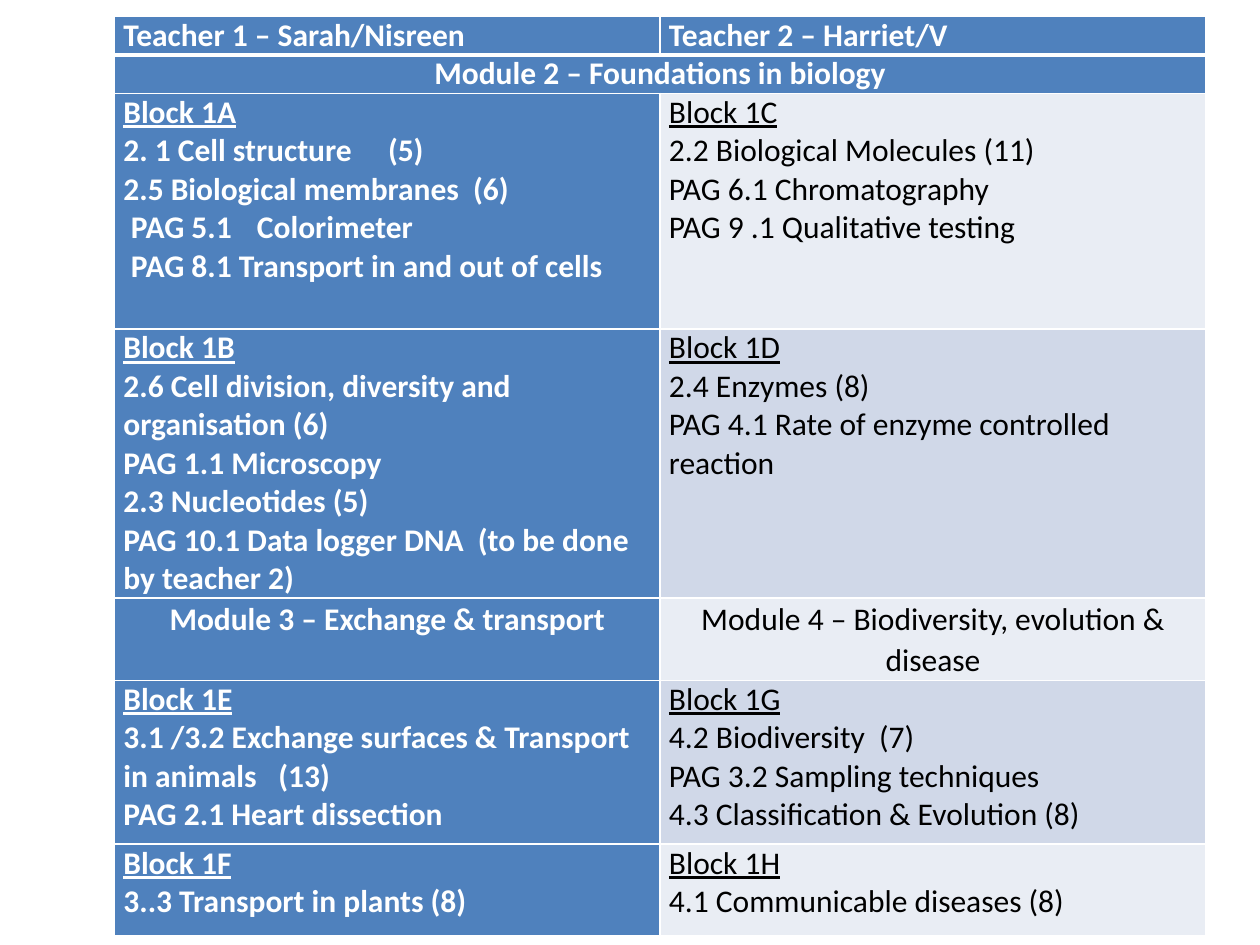
from lxml import etree
from pptx import Presentation
from pptx.dml.color import RGBColor
from pptx.enum.text import PP_ALIGN
from pptx.oxml import ns
from pptx.util import Inches, Pt

BLUE = RGBColor(0x4F, 0x81, 0xBD)
PALE = RGBColor(0xE9, 0xED, 0xF4)
MID = RGBColor(0xD0, 0xD8, 0xE8)
WHITE = RGBColor(0xFF, 0xFF, 0xFF)
BLACK = RGBColor(0, 0, 0)

COLUMN_WIDTH = 4.33
ROW_HEIGHTS = [0.28, 0.28, 1.87, 1.8, 0.29, 1.3, 0.73]
HEADER_ROWS = (0, 1)
MODULE_ROWS = (1, 4)

# One (teacher 1, teacher 2) pair per row, one string per paragraph
PLAN = [
    (["Teacher 1 – Sarah/Nisreen"], ["Teacher 2 – Harriet/V"]),
    (["Module 2 – Foundations in biology"], []),
    (["Block 1A", "2. 1 Cell structure\t(5)", "2.5 Biological membranes  (6)",
      "PAG 5.1\tColorimeter", "PAG 8.1 Transport in and out of cells"],
     ["Block 1C", "2.2 Biological Molecules (11)", "PAG 6.1 Chromatography",
      "PAG 9 .1 Qualitative testing"]),
    (["Block 1B", "2.6 Cell division, diversity and organisation (6)",
      "PAG 1.1 Microscopy", "2.3 Nucleotides (5)",
      "PAG 10.1 Data logger DNA  (to be done by teacher 2)"],
     ["Block 1D", "2.4 Enzymes (8)",
      "PAG 4.1 Rate of enzyme controlled reaction"]),
    (["Module 3 – Exchange & transport"],
     ["Module 4 – Biodiversity, evolution & disease"]),
    (["Block 1E", "3.1 /3.2 Exchange surfaces & Transport in animals\t(13)",
      "PAG 2.1 Heart dissection"],
     ["Block 1G", "4.2 Biodiversity  (7)", "PAG 3.2 Sampling techniques",
      "4.3 Classification & Evolution (8)"]),
    (["Block 1F", "3..3 Transport in plants (8)"],
     ["Block 1H", "4.1 Communicable diseases (8)"]),
]

# Tab stops for lines with a wide gap, and lines set slightly in (inches)
TAB_STOPS = {"2. 1": 2.1, "PAG 5.1": 1.05, "3.1 /3.2": 1.23}
INDENTS = {"PAG 5.1": 0.06, "PAG 8.1": 0.06}


def match_start(line, settings):
    return next((v for start, v in settings.items() if line.startswith(start)), None)


def add_tab_stop(properties, position):
    tabs = etree.SubElement(properties, ns.qn("a:tabLst"))
    etree.SubElement(tabs, ns.qn("a:tab"), pos=str(Inches(position)), algn="l")


def set_borders(cell, row):
    properties = cell._tc.get_or_add_tcPr()
    for side in "LRTB":
        under_header = (row, side) in ((0, "B"), (1, "T"))
        border = etree.SubElement(properties, ns.qn(f"a:ln{side}"),
                                  w=str(Pt(3 if under_header else 1)))
        fill = etree.SubElement(border, ns.qn("a:solidFill"))
        etree.SubElement(fill, ns.qn("a:srgbClr"), val=str(WHITE))


def write_line(paragraph, line, strong, row):
    paragraph.text = line
    font = paragraph.font
    font.name, font.size, font.bold = "Calibri", Pt(18), strong
    font.color.rgb = WHITE if strong else BLACK
    font.underline = line.startswith("Block")
    if row in MODULE_ROWS:
        paragraph.alignment = PP_ALIGN.CENTER
        if row not in HEADER_ROWS:
            paragraph.line_spacing = 1.07

    properties = paragraph._p.get_or_add_pPr()
    indent = match_start(line, INDENTS)
    if indent:
        properties.set("marL", str(Inches(indent)))
        properties.set("indent", "0")
    tab = match_start(line, TAB_STOPS)
    if tab:
        add_tab_stop(properties, tab)
        # Tab stops come before the default run properties
        properties.append(properties.find(ns.qn("a:defRPr")))


def fill_cell(cell, lines, row, column):
    strong = row in HEADER_ROWS or column == 0
    cell.margin_left = cell.margin_right = Inches(0.07)
    cell.margin_top = cell.margin_bottom = 0
    set_borders(cell, row)
    cell.fill.solid()
    cell.fill.fore_color.rgb = BLUE if strong else (MID if row % 2 else PALE)
    frame = cell.text_frame
    for i, line in enumerate(lines):
        paragraph = frame.add_paragraph() if i else frame.paragraphs[0]
        write_line(paragraph, line, strong, row)


def add_plan(slide):
    table = slide.shapes.add_table(
        len(PLAN), 2, Inches(0.91), Inches(0.13),
        Inches(2 * COLUMN_WIDTH), Inches(sum(ROW_HEIGHTS))).table
    table.first_col = True
    for column in table.columns:
        column.width = Inches(COLUMN_WIDTH)
    for row, height in enumerate(ROW_HEIGHTS):
        table.rows[row].height = Inches(height)
        for column, lines in enumerate(PLAN[row]):
            fill_cell(table.cell(row, column), lines, row, column)
    # The first module spans both teachers
    table.cell(1, 0).merge(table.cell(1, 1))


def main():
    deck = Presentation()
    deck.slide_width, deck.slide_height = Inches(10), Inches(7.5)
    add_plan(deck.slides.add_slide(deck.slide_layouts[6]))
    deck.save("out.pptx")


if __name__ == "__main__":
    main()
